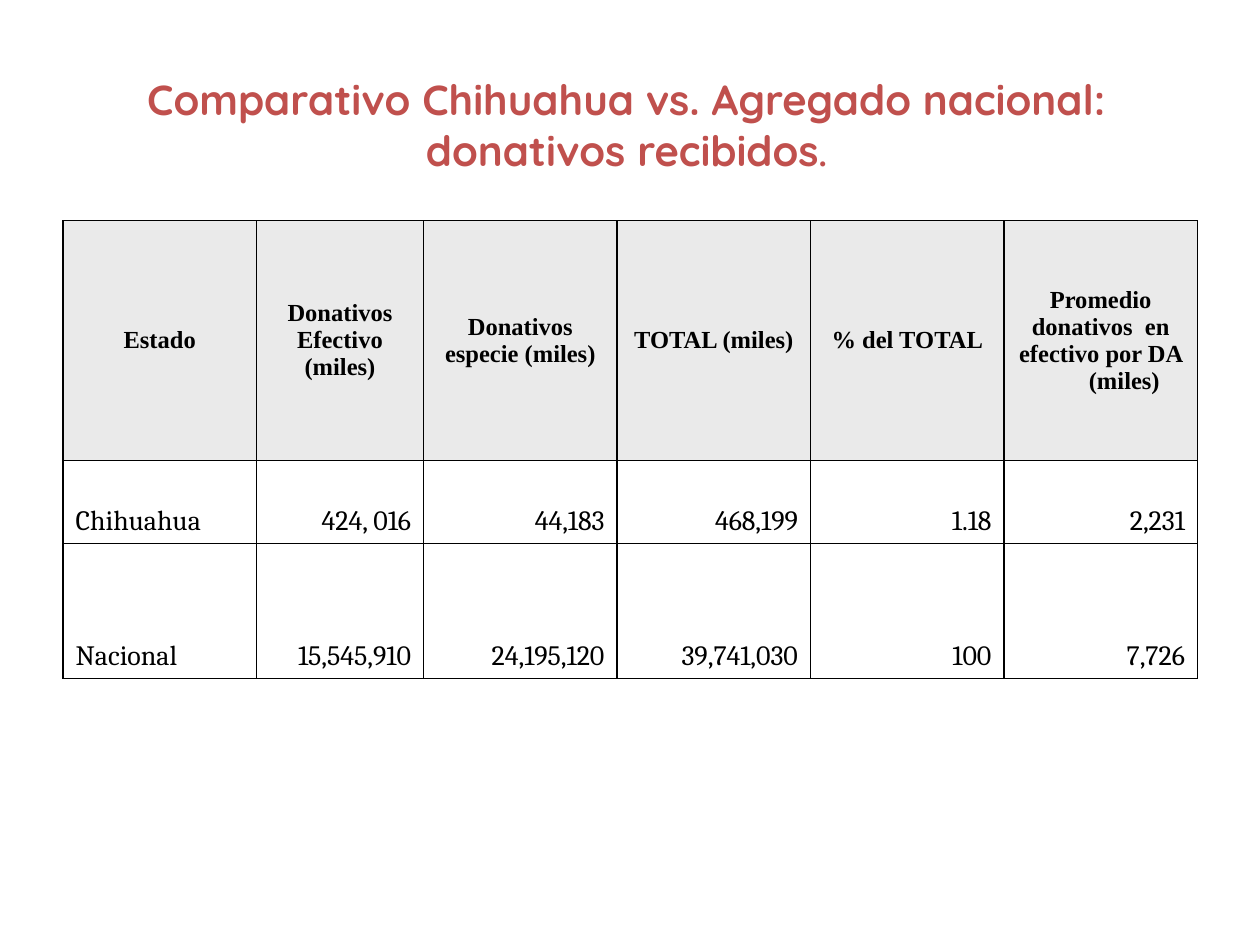
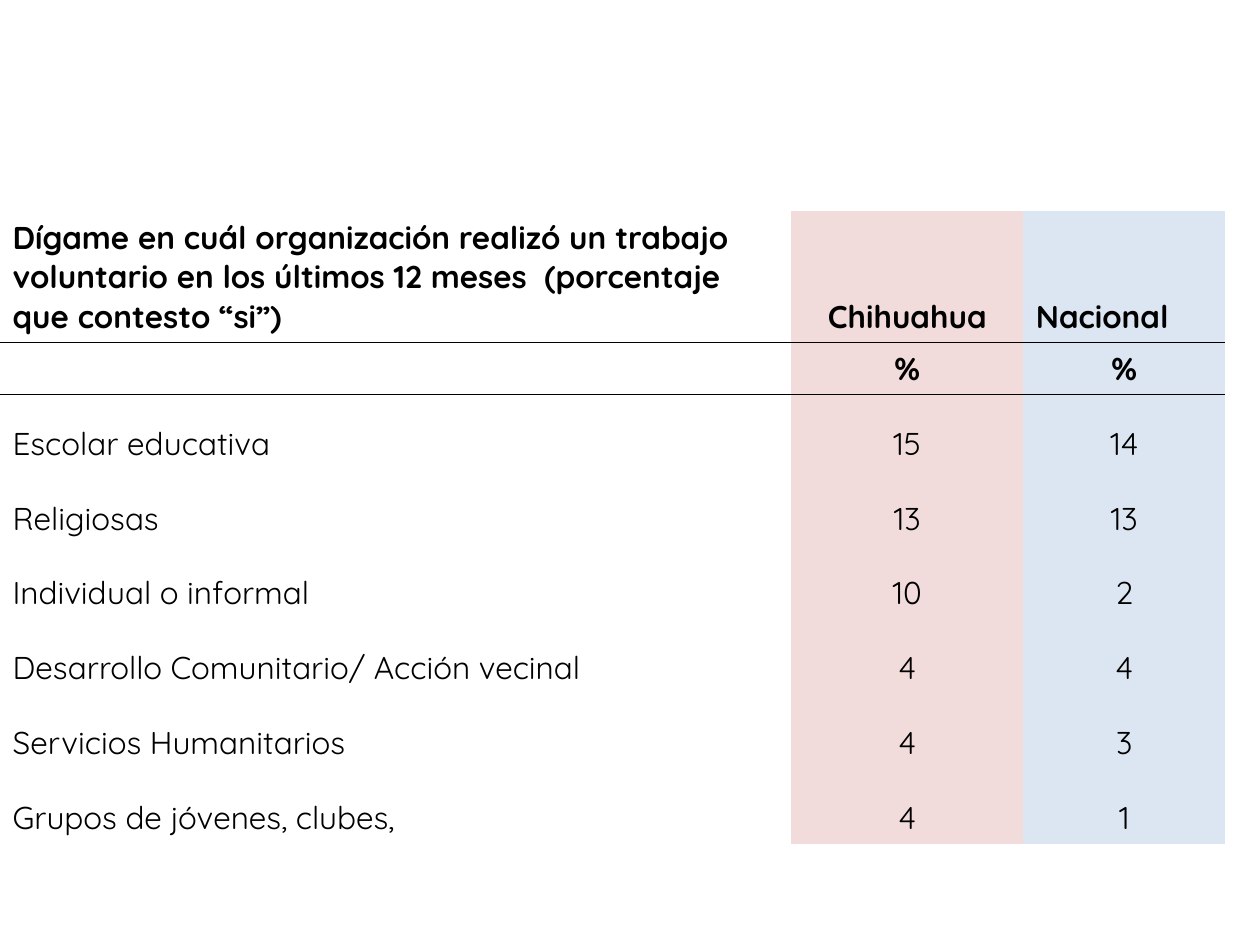
from lxml import etree
from pptx import Presentation
from pptx.dml.color import RGBColor
from pptx.enum.text import MSO_ANCHOR, PP_ALIGN
from pptx.oxml.ns import qn
from pptx.util import Cm, Pt

LEFT, MID, RIGHT = PP_ALIGN.LEFT, PP_ALIGN.CENTER, PP_ALIGN.RIGHT
CENTER, BASE = MSO_ANCHOR.MIDDLE, MSO_ANCHOR.BOTTOM
BLACK = RGBColor(0x00, 0x00, 0x00)
RED = RGBColor(0xC0, 0x50, 0x4D)
GRAY = RGBColor(0xEA, 0xEA, 0xEA)
PINK = RGBColor(0xF2, 0xDC, 0xDB)
BLUE = RGBColor(0xDC, 0xE6, 0xF2)
PLAIN = "{2D5ABB26-0587-4C30-8999-92F81FD0307C}"

TITLE = {"name": "Quicksand", "size": Pt(24), "bold": True}
STOP = {"name": "Times New Roman", "size": Pt(18), "bold": True}
HEAD = {"name": "Times New Roman", "size": Pt(14), "bold": True}
BODY = {"name": "Cambria", "size": Pt(16), "bold": False}
LABEL = {"name": "Quicksand", "size": Pt(18), "bold": True}
ENTRY = {**LABEL, "bold": False}


def add_grid(slide, left, top, cols, rows):
    frame = slide.shapes.add_table(
        len(rows), len(cols), Cm(left), Cm(top), Cm(sum(cols)), Cm(sum(rows)))
    grid = frame.table
    grid.first_row = grid.horz_banding = False
    grid._tbl.tblPr.find(qn("a:tableStyleId")).text = PLAIN
    for col, width in zip(grid.columns, cols):
        col.width = Cm(width)
    for row, height in zip(grid.rows, rows):
        row.height = Cm(height)
    return grid


def set_cell(cell, text, style, align, anchor, fill, sides, indent=0.95):
    cell.vertical_anchor = anchor
    for side in sides:
        line = etree.SubElement(cell._tc.get_or_add_tcPr(), qn(f"a:ln{side}"), w=str(Pt(1)))
        solid = etree.SubElement(line, qn("a:solidFill"))
        etree.SubElement(solid, qn("a:srgbClr"), val=str(BLACK))
    if fill:
        cell.fill.solid()
        cell.fill.fore_color.rgb = fill
    else:
        cell.fill.background()
    cell.text = text
    for para in cell.text_frame.paragraphs:
        props = para._p.get_or_add_pPr()
        props.set("marL", str(Cm(indent)))
        props.set("indent", str(-Cm(indent)))
        para.alignment = align
        for run in para.runs:
            for key, value in style.items():
                setattr(run.font, key, value)
            run.font.color.rgb = BLACK


deck = Presentation()
deck.slide_width, deck.slide_height = Cm(25.4), Cm(19.05)

slide = deck.slides.add_slide(deck.slide_layouts[5])
title = slide.shapes.title
title.left, title.top, title.width, title.height = Cm(2.11), Cm(0.91), Cm(21.03), Cm(3.18)
title.text_frame.vertical_anchor = CENTER
para = title.text_frame.paragraphs[0]
para.alignment = MID
for text, style in [
    ("Comparativo Chihuahua vs. Agregado nacional: donativos recibidos", TITLE),
    (".", STOP),
]:
    run = para.add_run()
    run.text = text
    for key, value in style.items():
        setattr(run.font, key, value)
    run.font.color.rgb = RED

gifts = [
    ["Estado", "Donativos\nEfectivo\n(miles)", "Donativos\nespecie (miles)", "TOTAL (miles)",
     "% del TOTAL", "Promedio\ndonativos  en\nefectivo por DA (miles)"],
    ["Chihuahua", "424, 016", "44,183", "468,199", "1.18", "2,231"],
    ["Nacional", "15,545,910", "24,195,120", "39,741,030", "100", "7,726"],
]
grid = add_grid(slide, 1.27, 4.45, [3.9, 3.37] + [3.9] * 4, [4.83, 1.68, 2.72])
for r, row in enumerate(gifts):
    for c, text in enumerate(row):
        if r == 0:
            look = HEAD, MID, CENTER, GRAY
        else:
            look = BODY, RIGHT if c else LEFT, BASE, None
        set_cell(grid.cell(r, c), text, *look, "LRTB")

slide = deck.slides.add_slide(deck.slide_layouts[6])
work = [
    ["Dígame en cuál organización realizó un trabajo voluntario en los últimos 12 meses  "
     "(porcentaje que contesto “si”)", "Chihuahua", "Nacional"],
    ["", "%", "%"],
    ["Escolar educativa", "15", "14"],
    ["Religiosas", "13", "13"],
    ["Individual o informal", "10", "2"],
    ["Desarrollo Comunitario/ Acción vecinal", "4", "4"],
    ["Servicios Humanitarios", "4", "3"],
    ["Grupos de jóvenes, clubes,", "4", "1"],
]
grid = add_grid(slide, 0, 4.26, [15.95, 4.68, 4.07], [2.54, 1.02] + [1.51] * 6)
for r, row in enumerate(work):
    for c, text in enumerate(row):
        style = LABEL if r < 2 else ENTRY
        align = LEFT if c == 0 or text == "Nacional" else MID
        sides = {0: "B", 1: "T"}.get(r, "")
        indent = 0 if r == c == 0 else 0.95
        set_cell(grid.cell(r, c), text, style, align, BASE, (None, PINK, BLUE)[c], sides, indent)

deck.save("out.pptx")
